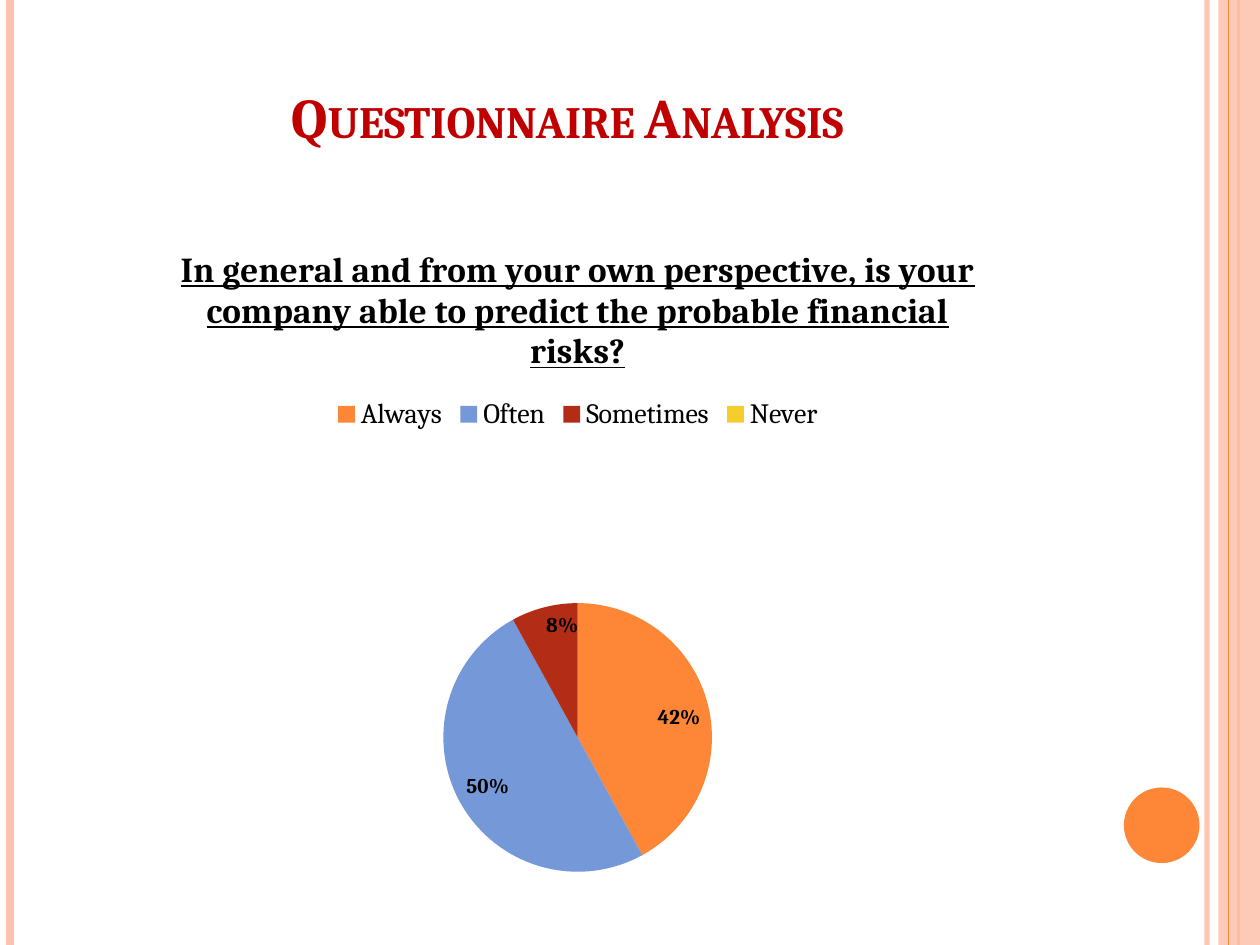
from lxml import etree
from pptx import Presentation, util as u
from pptx.chart.data import CategoryChartData
from pptx.dml.color import RGBColor
from pptx.enum import chart as ch, shapes as sh, text as tx
from pptx.oxml import parse_xml
from pptx.oxml.ns import qn, nsdecls

WIDE, HIGH = 10, 7.5
FACE = "Cambria"
HUES = {"peach": "FEC3AE", "orange": "FE8637", "blue": "7598D9",
        "rust": "B32C16", "gold": "F5CD2D", "red": "C00000", "black": "000000"}
SHARES = {"Always": (42, "orange"), "Often": (50, "blue"),
          "Sometimes": (8, "rust"), "Never": (0, "gold")}
ASK = ("In general and from your own perspective, is your company able "
       "to predict the probable financial risks?")
# x, hue, width in points, opacity in percent
BACK = [(9.58, "peach", 3, 93), (0.08, "peach", 4.5, 100), (9.83, "orange", 1.5, 100)]
FRONT = [(9.75, "orange", 0.75, 100)]


def hue(name):
    return RGBColor.from_string(HUES[name])


def box(*nums):
    return [u.Inches(n) for n in nums]


def style(font, name="black", **form):
    for key, val in {"name": FACE, **form}.items():
        setattr(font, key, val)
    font.color.rgb = hue(name)


def fade(elem, pct):
    """Set the opacity of the colour inside elem."""
    if pct < 100:
        tone = next(elem.iter(qn("a:srgbClr")))
        etree.SubElement(tone, qn("a:alpha"), val=str(pct * 1000))


def stripe(page, x, name, width, pct):
    line = page.shapes.add_connector(sh.MSO_CONNECTOR.STRAIGHT, *box(x, 0, x, HIGH))
    line.line.color.rgb = hue(name)
    line.line.width = u.Pt(width)
    props = line._element.spPr
    fade(props, pct)
    etree.SubElement(props, qn("a:effectLst"))


def solid(page, kind, place, name, pct=100):
    item = page.shapes.add_shape(kind, *box(*place))
    item.shadow.inherit = False
    item.fill.solid()
    item.fill.fore_color.rgb = hue(name)
    item.line.fill.background()
    fade(item._element.spPr, pct)


def title(page, words, place):
    frame = page.shapes.add_textbox(*box(*place)).text_frame
    frame.word_wrap = True
    frame.vertical_anchor = tx.MSO_ANCHOR.BOTTOM
    para = frame.paragraphs[0]
    para.alignment = tx.PP_ALIGN.CENTER
    run = para.add_run()
    run.text = words
    style(run.font, "red", size=u.Pt(32), bold=True)
    run.font._element.set("cap", "small")


def pie(page, place):
    data = CategoryChartData()
    data.categories = list(SHARES)
    data.add_series("Series 1", [val for val, _ in SHARES.values()])
    chart = page.shapes.add_chart(ch.XL_CHART_TYPE.PIE, *box(*place), data).chart
    style(chart.font, size=u.Pt(10))

    # Heading and legend
    chart.has_title = True
    head = chart.chart_title
    head.include_in_layout = False
    run = head.text_frame.paragraphs[0].add_run()
    run.text = ASK
    style(run.font, size=u.Pt(20), bold=True, underline=True)
    chart.has_legend = True
    chart.legend.position = ch.XL_LEGEND_POSITION.TOP
    chart.legend.include_in_layout = False
    style(chart.legend.font, size=u.Pt(16))

    # Slices
    plot = chart.plots[0]
    plot.vary_by_categories = True
    series = plot.series[0]
    for i, (_, name) in enumerate(SHARES.values()):
        fill = series.points[i].format.fill
        fill.solid()
        fill.fore_color.rgb = hue(name)

    # Percent labels, none on empty slices
    tags = series.data_labels
    for key, val in {"show_percentage": True, "show_value": False,
                     "number_format": "0%", "number_format_is_linked": False,
                     "position": ch.XL_LABEL_POSITION.INSIDE_END}.items():
        setattr(tags, key, val)
    style(tags.font, size=u.Pt(12), bold=True)
    empty = [i for i, (val, _) in enumerate(SHARES.values()) if not val]
    for spot, i in enumerate(empty):
        tags._element.insert(spot, parse_xml(
            f'<c:dLbl {nsdecls("c")}><c:idx val="{i}"/><c:delete val="1"/></c:dLbl>'))

    # Plot area, as shares of the chart
    area = chart._chartSpace.chart.plotArea
    for old in area.findall(qn("c:layout")):
        area.remove(old)
    layout = etree.Element(qn("c:layout"))
    manual = etree.SubElement(layout, qn("c:manualLayout"))
    for key, val in {"layoutTarget": "inner", "xMode": "edge", "yMode": "edge",
                     "x": 0, "y": 0.57, "w": 1, "h": 0.4}.items():
        etree.SubElement(manual, qn(f"c:{key}"), val=str(val))
    area.insert(0, layout)


def main():
    deck = Presentation()
    deck.slide_width, deck.slide_height = box(WIDE, HIGH)
    page = deck.slides.add_slide(deck.slide_layouts[6])

    # Side decoration
    for row in BACK:
        stripe(page, *row)
    solid(page, sh.MSO_SHAPE.RECTANGLE, (9.67, 0, WIDE - 9.67, HIGH), "peach", 87)
    for row in FRONT:
        stripe(page, *row)
    solid(page, sh.MSO_SHAPE.OVAL, (8.92, 6.25, 0.6, 0.6), "orange")

    # Content
    title(page, "Questionnaire Analysis", (0.42, 0, 8.17, 1.24))
    pie(page, (0.5, 1.75, 8.17, 5.33))
    deck.save("out.pptx")


if __name__ == "__main__":
    main()
